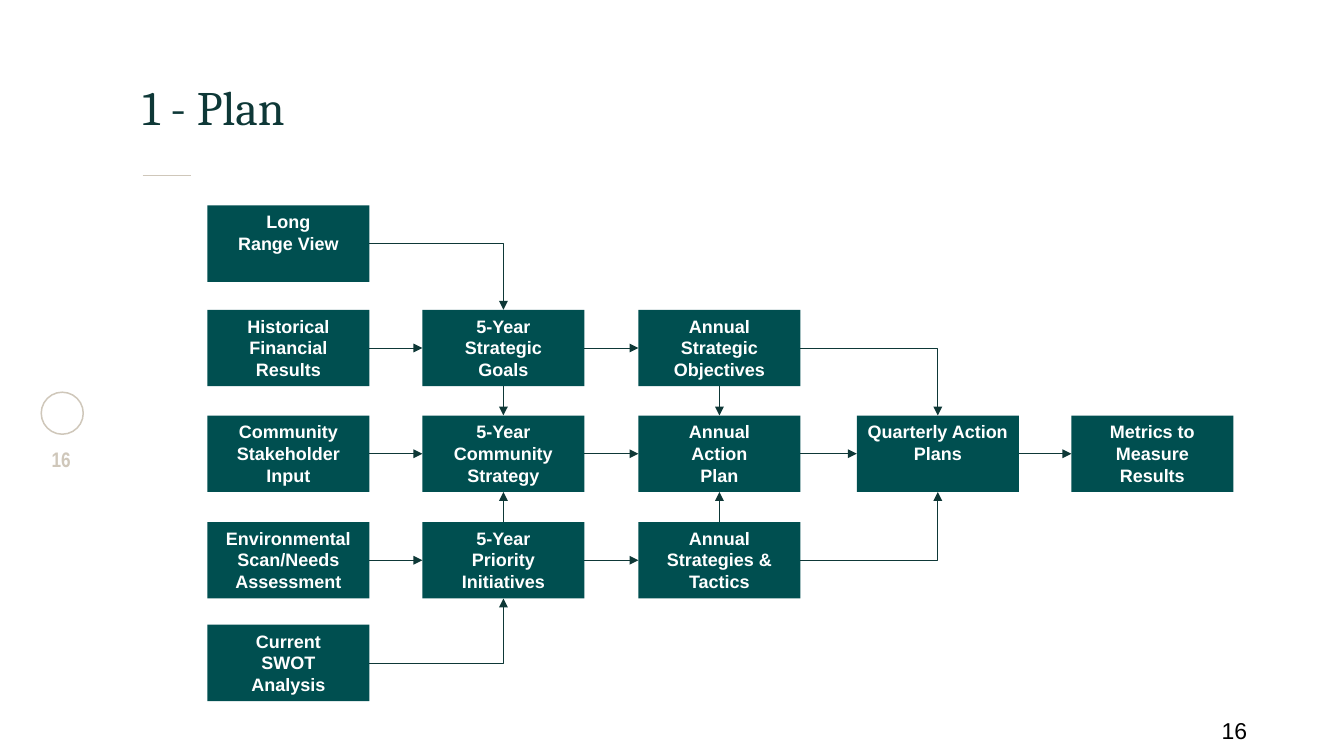
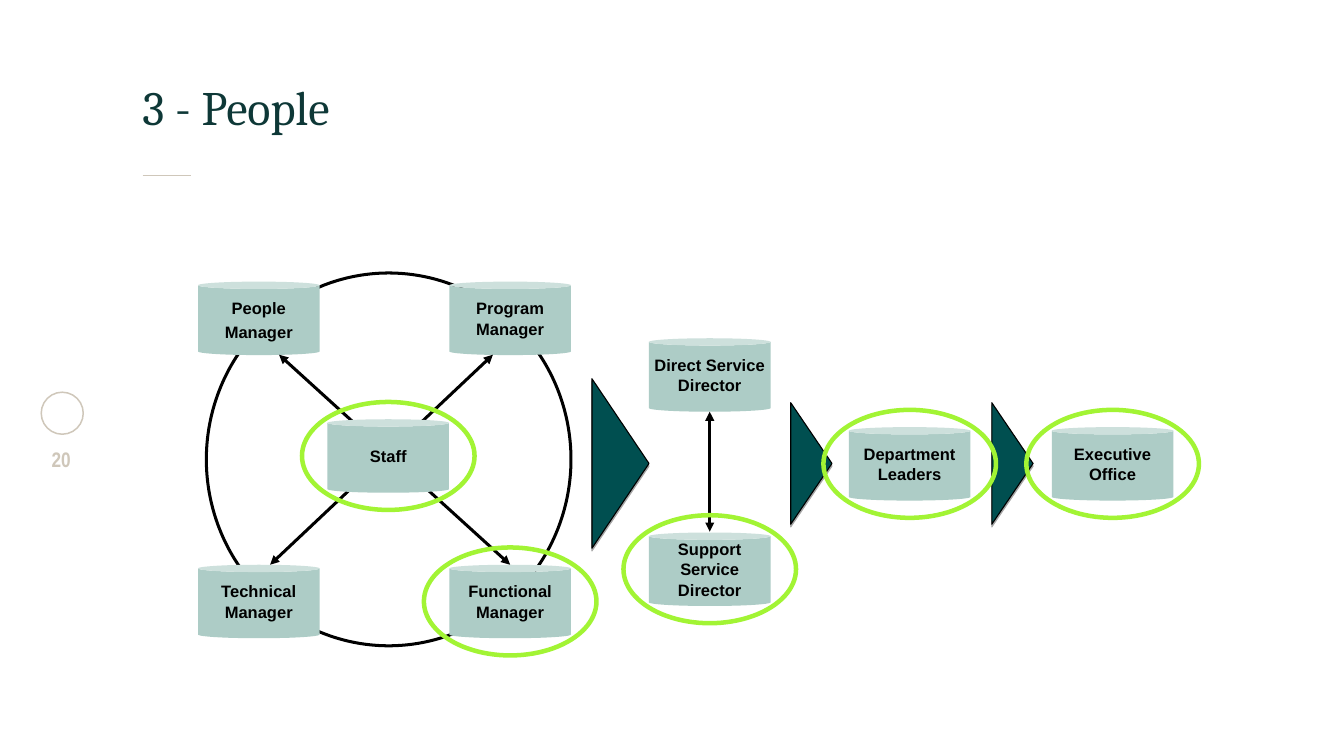
from dataclasses import dataclass

from lxml.etree import SubElement
from pptx import Presentation
from pptx.dml.color import RGBColor
from pptx.enum.shapes import MSO_CONNECTOR, MSO_SHAPE
from pptx.enum.text import MSO_ANCHOR, PP_ALIGN
from pptx.oxml.ns import qn
from pptx.presentation import Presentation as Deck
from pptx.shapes.autoshape import Shape
from pptx.shapes.connector import Connector
from pptx.slide import Slide
from pptx.util import Pt

TEAL = "004F50"
DARK_TEAL = "0E3837"
SAGE = "ADCCC6"
LIME = "A2F434"
SAND = "CFC7BA"
BLACK = "000000"
WHITE = "FFFFFF"

TOP, LEFT, BOTTOM, RIGHT = range(4)

BOX_WIDTH, BOX_HEIGHT = 108, 51
COLUMNS = (138.25, 281.5, 425.5, 571, 714)
ROWS = (137, 206.5, 277, 348, 416.5)
CAN_WIDTH, CAN_HEIGHT = 81, 49
RING_WIDTH, RING_HEIGHT = 115, 72


@dataclass(frozen=True)
class Step:
    name: str
    text: str
    column: int
    row: int


@dataclass(frozen=True)
class Flow:
    start: str
    end: str
    start_side: int = RIGHT
    end_side: int = LEFT


@dataclass(frozen=True)
class Role:
    text: str
    left: float
    top: float
    ringed: bool = False
    line_spacing: float = 0.8


@dataclass(frozen=True)
class Chevron:
    left: float
    top: float
    width: float
    height: float


STEPS = (
    Step("view", "Long\vRange View", 0, 0),
    Step("history", "Historical Financial Results", 0, 1),
    Step("input", "Community Stakeholder Input", 0, 2),
    Step("scan", "Environmental Scan/Needs Assessment", 0, 3),
    Step("swot", "Current\vSWOT\vAnalysis", 0, 4),
    Step("goals", "5-Year\vStrategic\vGoals", 1, 1),
    Step("strategy", "5-Year\vCommunity\vStrategy", 1, 2),
    Step("initiatives", "5-Year\vPriority\vInitiatives", 1, 3),
    Step("objectives", "Annual Strategic Objectives", 2, 1),
    Step("plan", "Annual\vAction\vPlan", 2, 2),
    Step("tactics", "Annual Strategies & Tactics", 2, 3),
    Step("quarterly", "Quarterly Action\vPlans", 3, 2),
    Step("metrics", "Metrics to Measure Results", 4, 2),
)

FLOWS = (
    Flow("view", "goals", RIGHT, TOP),
    Flow("history", "goals"),
    Flow("input", "strategy"),
    Flow("scan", "initiatives"),
    Flow("swot", "initiatives", RIGHT, BOTTOM),
    Flow("goals", "objectives"),
    Flow("strategy", "plan"),
    Flow("initiatives", "tactics"),
    Flow("goals", "strategy", BOTTOM, TOP),
    Flow("initiatives", "strategy", TOP, BOTTOM),
    Flow("objectives", "plan", BOTTOM, TOP),
    Flow("tactics", "plan", TOP, BOTTOM),
    Flow("objectives", "quarterly", RIGHT, TOP),
    Flow("tactics", "quarterly", RIGHT, BOTTOM),
    Flow("plan", "quarterly"),
    Flow("quarterly", "metrics"),
)

STAFF = Role("Staff", 218.25, 279.5, ringed=True)
ROLES = (
    Role("Functional\nManager", 299.5, 376.5, ringed=True),
    Role("Program\nManager", 299.5, 187.75),
    Role("Technical\nManager", 132, 376.5),
    Role("People\nManager", 132, 187.75, line_spacing=1.0),
    Role("Support\nService\nDirector", 432.5, 355, ringed=True),
    Role("Direct Service\nDirector", 432.5, 225.5),
    Role("Department\nLeaders", 565.75, 284.75, ringed=True),
    Role("Executive\nOffice", 701, 284.75, ringed=True),
)

CHEVRONS = (
    Chevron(394.5, 252.5, 38, 113),
    Chevron(527, 268.5, 27.5, 81),
    Chevron(661, 268.5, 27.5, 81),
)

LINKS = (
    (473, 354.5, 473, 274.5),
    (340, 376.5, 186, 236.5),
    (180, 376.5, 328.5, 236.5),
)


def color(value: str) -> RGBColor:
    return RGBColor.from_string(value)


def write(shape: Shape, text: str, *, size: float, fill: str, font: str = "Arial",
          bold: bool = False, align: PP_ALIGN = PP_ALIGN.CENTER,
          anchor: MSO_ANCHOR = MSO_ANCHOR.TOP, wrap: bool = True,
          margins: tuple[float, float] = (7.2, 3.6),
          line_spacing: float = 1.0, space_before: float = 0) -> None:
    frame = shape.text_frame
    frame.word_wrap = wrap
    frame.vertical_anchor = anchor
    frame.margin_left = frame.margin_right = Pt(margins[0])
    frame.margin_top = frame.margin_bottom = Pt(margins[1])
    frame.text = text
    for paragraph in frame.paragraphs:
        paragraph.alignment = align
        paragraph.line_spacing = line_spacing
        paragraph.space_before = Pt(space_before)
        for run in paragraph.runs:
            run.font.name = font
            run.font.size = Pt(size)
            run.font.bold = bold
            run.font.color.rgb = color(fill)


def add_text(slide: Slide, text: str, left: float, top: float,
             width: float, height: float, **style) -> None:
    box = slide.shapes.add_textbox(Pt(left), Pt(top), Pt(width), Pt(height))
    write(box, text, **style)


def add_shape(slide: Slide, kind: MSO_SHAPE, left: float, top: float,
              width: float, height: float, fill: str | None = None,
              line: str | None = None, weight: float = 1) -> Shape:
    shape = slide.shapes.add_shape(kind, Pt(left), Pt(top), Pt(width), Pt(height))
    if fill:
        shape.fill.solid()
        shape.fill.fore_color.rgb = color(fill)
    else:
        shape.fill.background()
    if line:
        shape.line.color.rgb = color(line)
        shape.line.width = Pt(weight)
    else:
        shape.line.fill.background()
    shape.shadow.inherit = False
    return shape


def add_line(slide: Slide, start: tuple[float, float], end: tuple[float, float],
             line: str, weight: float, arrows: tuple[str, ...] = (),
             bent: bool = False) -> Connector:
    kind = MSO_CONNECTOR.ELBOW if bent else MSO_CONNECTOR.STRAIGHT
    connector = slide.shapes.add_connector(kind, *map(Pt, start + end))
    connector.line.color.rgb = color(line)
    connector.line.width = Pt(weight)
    properties = connector._element.spPr
    if bent:
        properties.find(qn("a:prstGeom")).set("prst", "bentConnector2")
    for arrow in arrows:
        SubElement(properties.find(qn("a:ln")), qn(arrow), type="triangle")
    SubElement(properties, qn("a:effectLst"))
    return connector


def add_step(slide: Slide, step: Step) -> Shape:
    box = add_shape(slide, MSO_SHAPE.RECTANGLE, COLUMNS[step.column], ROWS[step.row],
                    BOX_WIDTH, BOX_HEIGHT, fill=TEAL)
    write(box, step.text, size=12, fill=WHITE, bold=True)
    return box


def side_point(step: Step, side: int) -> tuple[float, float]:
    across, down = ((0.5, 0), (0, 0.5), (0.5, 1), (1, 0.5))[side]
    return COLUMNS[step.column] + across * BOX_WIDTH, ROWS[step.row] + down * BOX_HEIGHT


def add_flow(slide: Slide, flow: Flow, steps: dict[str, Step],
             boxes: dict[str, Shape]) -> None:
    bent = flow.start_side == RIGHT and flow.end_side != LEFT
    connector = add_line(slide, side_point(steps[flow.start], flow.start_side),
                         side_point(steps[flow.end], flow.end_side),
                         DARK_TEAL, 0.5, ("a:tailEnd",), bent)
    connector.begin_connect(boxes[flow.start], flow.start_side)
    connector.end_connect(boxes[flow.end], flow.end_side)


def add_role(slide: Slide, role: Role) -> None:
    can = add_shape(slide, MSO_SHAPE.CAN, role.left, role.top,
                    CAN_WIDTH, CAN_HEIGHT, fill=SAGE)
    can.adjustments[0] = 0.1
    write(can, role.text, size=11, fill=BLACK, bold=True, anchor=MSO_ANCHOR.MIDDLE,
          wrap=False, margins=(6.5, 3), line_spacing=role.line_spacing, space_before=3)


def add_ring(slide: Slide, role: Role) -> None:
    add_shape(slide, MSO_SHAPE.OVAL, role.left + (CAN_WIDTH - RING_WIDTH) / 2,
              role.top + (CAN_HEIGHT - RING_HEIGHT) / 2,
              RING_WIDTH, RING_HEIGHT, line=LIME, weight=3)


def add_chevron(slide: Slide, chevron: Chevron) -> None:
    arrow = add_shape(slide, MSO_SHAPE.RIGHT_ARROW, chevron.left, chevron.top,
                      chevron.width, chevron.height, fill=TEAL, line=BLACK, weight=0.75)
    arrow.adjustments[0] = 0.5
    arrow.adjustments[1] = 1
    effects = arrow._element.spPr.find(qn("a:effectLst"))
    shadow = SubElement(effects, qn("a:outerShdw"), blurRad="0",
                        dist=str(Pt(1.8)), dir="5400000", rotWithShape="0")
    tint = SubElement(shadow, qn("a:srgbClr"), val=BLACK)
    SubElement(tint, qn("a:alpha"), val="35000")


def add_base_slide(presentation: Deck, title: str, number: str) -> Slide:
    slide = presentation.slides.add_slide(presentation.slide_layouts[6])
    add_shape(slide, MSO_SHAPE.OVAL, 27.5, 261.5, 28, 28, line=SAND, weight=1)
    add_line(slide, (95, 117), (127.5, 117), SAND, 0.75)
    add_text(slide, number, 25.5, 298, 30.5, 27.5, size=14, fill=SAND,
             font="Arial Narrow", bold=True, margins=(0, 0))
    add_text(slide, title, 95, 36, 740, 54, size=32, fill=DARK_TEAL, font="Cambria",
             align=PP_ALIGN.LEFT, anchor=MSO_ANCHOR.BOTTOM, margins=(0, 0))
    return slide


def build_plan(presentation: Deck) -> None:
    slide = add_base_slide(presentation, "1 - Plan", "16")
    steps = {step.name: step for step in STEPS}
    boxes = {step.name: add_step(slide, step) for step in STEPS}
    add_text(slide, "16", 807, 474, 39.5, 26, size=15.3, fill=BLACK,
             align=PP_ALIGN.LEFT)
    for flow in FLOWS:
        add_flow(slide, flow, steps, boxes)


def build_people(presentation: Deck) -> None:
    slide = add_base_slide(presentation, "3 - People", "20")
    add_shape(slide, MSO_SHAPE.OVAL, 137.5, 182, 243, 248.5, line=BLACK, weight=2)
    for role in ROLES:
        add_role(slide, role)
    for chevron in CHEVRONS:
        add_chevron(slide, chevron)
    for left, top, right, bottom in LINKS:
        add_line(slide, (left, top), (right, bottom), BLACK, 2, ("a:headEnd", "a:tailEnd"))
    add_role(slide, STAFF)
    for role in (STAFF, *ROLES):
        if role.ringed:
            add_ring(slide, role)


def main() -> None:
    presentation = Presentation()
    presentation.slide_width = Pt(895.68)
    presentation.slide_height = Pt(504)
    build_plan(presentation)
    build_people(presentation)
    presentation.save("out.pptx")


if __name__ == "__main__":
    main()
